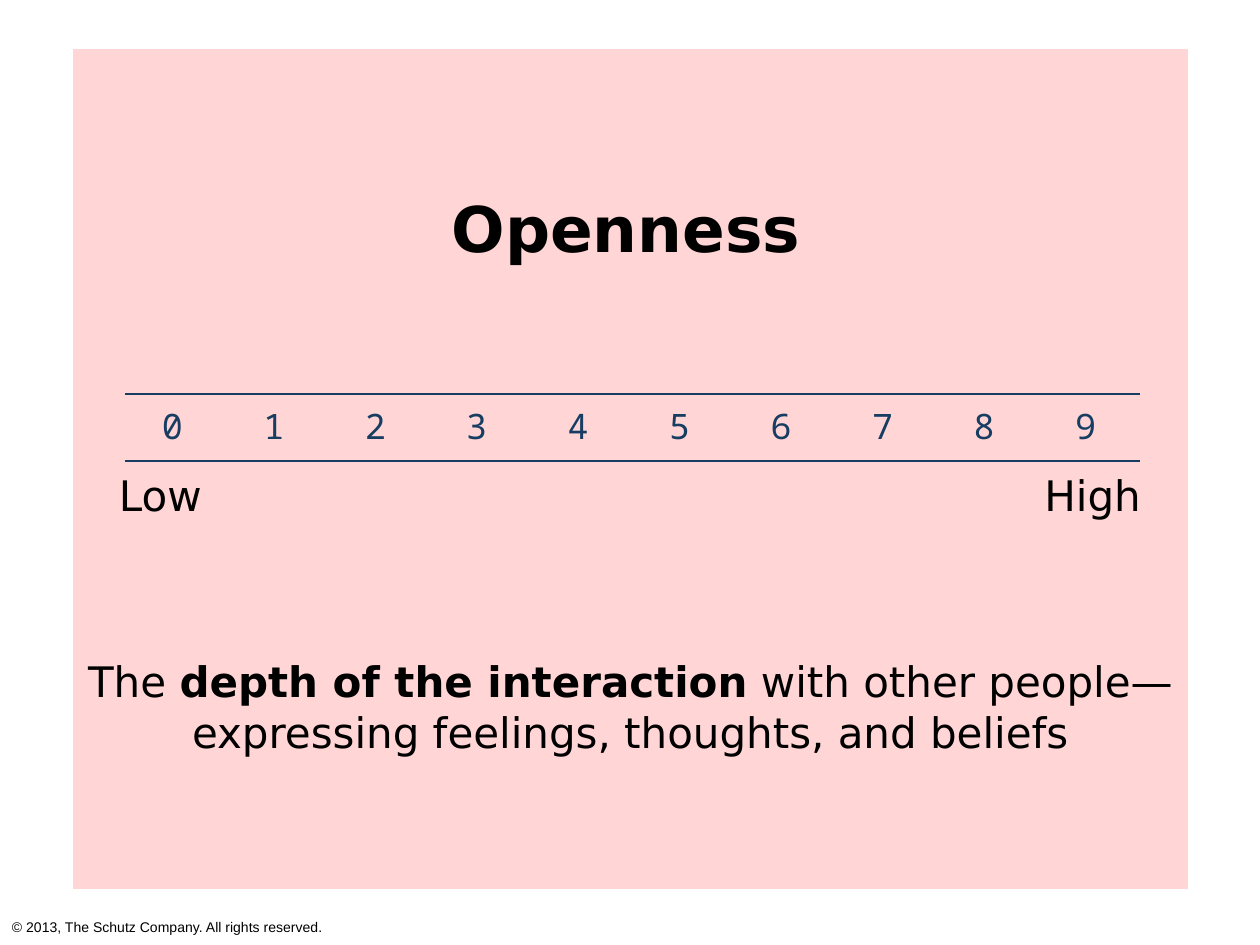
"""Build the Openness scale slide."""
from dataclasses import dataclass

from lxml.etree import SubElement
from pptx import Presentation
from pptx.dml.color import RGBColor
from pptx.enum.text import MSO_ANCHOR as Anchor, MSO_AUTO_SIZE as AutoSize, PP_ALIGN as Align
from pptx.oxml.ns import qn
from pptx.util import Emu, Pt

TITLE = "Openness"
SCALE = [str(score) for score in range(10)]
ENDS = [("Low", 107, Align.LEFT), ("High", 990, Align.RIGHT)]
DEFINITION = [
    ("The ", False),
    ("depth of the interaction", True),
    (" with other people—expressing feelings, thoughts, and beliefs", False),
]
COPYRIGHT = "© 2013, The Schutz Company. All rights reserved."

PANEL = (73, 49, 1115, 840)
SCALE_BOX = (125, 394, 1015, 67)


@dataclass(frozen=True)
class Theme:
    panel: str = "FFD6D5"
    ink: str = "000000"
    scale: str = "183D63"
    sans: str = "DejaVu Sans"
    mono: str = "Noto Sans Mono"
    small: str = "Arial"
    title_size: int = 36
    text_size: int = 24
    scale_size: int = 20
    small_size: int = 8
    rule: int = 1


THEME = Theme()


def px(length):
    return Emu(round(length * 914400 / 126))


def place(box):
    return [px(length) for length in box]


def set_font(font, name, size, color=THEME.ink):
    font.name = name
    font.size = Pt(size)
    font.color.rgb = RGBColor.from_string(color)


def write(frame, runs, align, name, size):
    frame.word_wrap = True
    frame.auto_size = AutoSize.NONE
    frame.vertical_anchor = Anchor.TOP
    frame.margin_left = frame.margin_right = px(12)
    frame.margin_top = frame.margin_bottom = px(8)
    paragraph = frame.paragraphs[0]
    paragraph.alignment = align
    set_font(paragraph.font, name, size)
    for words, bold in runs:
        run = paragraph.add_run()
        run.text = words
        run.font.bold = bold


def add_text(slide, box, runs, align, name=THEME.sans, size=THEME.text_size):
    write(slide.shapes.add_textbox(*place(box)).text_frame, runs, align, name, size)


def set_borders(cell):
    properties = cell._tc.get_or_add_tcPr()
    for side in ("lnL", "lnR"):
        SubElement(SubElement(properties, qn(f"a:{side}"), w="0"), qn("a:noFill"))
    for side in ("lnT", "lnB"):
        line = SubElement(properties, qn(f"a:{side}"), w=str(Pt(THEME.rule)))
        SubElement(SubElement(line, qn("a:solidFill")), qn("a:srgbClr"), val=THEME.scale)


def add_scale(slide):
    table = slide.shapes.add_table(1, len(SCALE), *place(SCALE_BOX)).table
    table.first_row = table.horz_banding = False
    for column, score in enumerate(SCALE):
        table.columns[column].width = px(SCALE_BOX[2] / len(SCALE))
        cell = table.cell(0, column)
        set_borders(cell)
        cell.fill.background()
        cell.margin_left, cell.margin_right = px(0), px(7)
        cell.margin_top = cell.margin_bottom = px(8)
        cell.text = score
        paragraph = cell.text_frame.paragraphs[0]
        paragraph.alignment = Align.CENTER
        set_font(paragraph.font, THEME.mono, THEME.scale_size, THEME.scale)


def main():
    deck = Presentation()
    deck.slide_width, deck.slide_height = px(1260), px(945)
    slide = deck.slides.add_slide(deck.slide_layouts[5])

    panel = slide.shapes.add_shape(1, *place(PANEL))
    panel.shadow.inherit = False
    panel.fill.solid()
    panel.fill.fore_color.rgb = RGBColor.from_string(THEME.panel)
    panel.line.fill.background()

    title = slide.shapes.title
    panel._element.getparent().append(title._element)
    title.left, title.top, title.width, title.height = place((270, 181, 712, 91))
    write(title.text_frame, [(TITLE, True)], Align.CENTER, THEME.sans, THEME.title_size)

    add_text(slide, (0, 911, 1260, 30), [(COPYRIGHT, False)], Align.LEFT,
             THEME.small, THEME.small_size)
    add_scale(slide)
    for label, left, align in ENDS:
        add_text(slide, (left, 462, 163, 64), [(label, False)], align)
    add_text(slide, (PANEL[0], 648, PANEL[2], 116), DEFINITION, Align.CENTER)
    deck.save("out.pptx")


if __name__ == "__main__":
    main()
